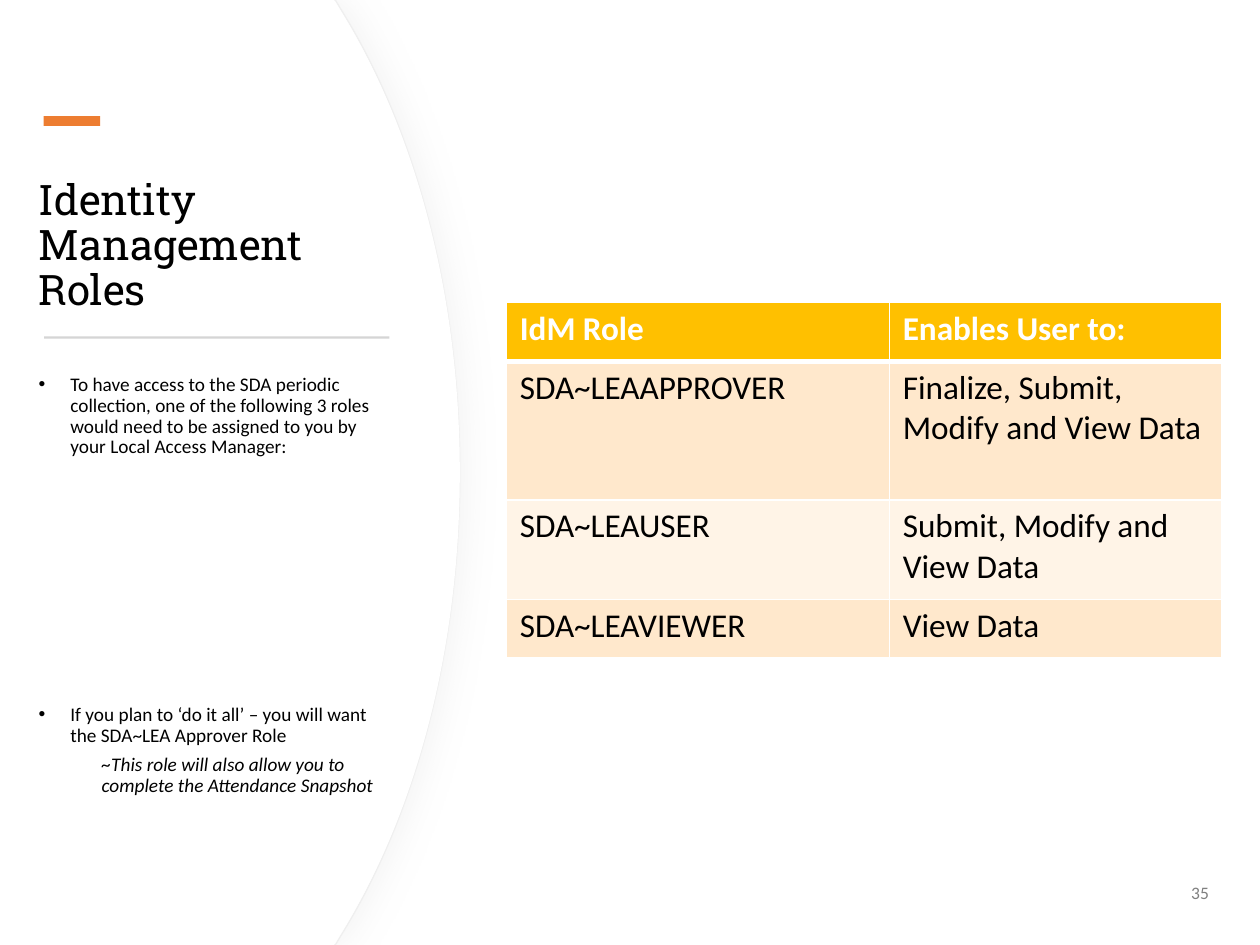
"""Build the Identity Management Roles slide with its role table."""
from lxml.etree import SubElement
from pptx import Presentation
from pptx.dml.color import RGBColor
from pptx.enum.shapes import MSO_SHAPE
from pptx.enum.text import MSO_ANCHOR, MSO_AUTO_SIZE, PP_ALIGN
from pptx.oxml import parse_xml
from pptx.oxml.ns import nsdecls, qn
from pptx.util import Cm, Pt

WHITE = RGBColor(0xFF, 0xFF, 0xFF)
BLACK = RGBColor(0x00, 0x00, 0x00)
GRAY = RGBColor(0x80, 0x80, 0x80)
RULE_GRAY = RGBColor(0xD5, 0xD5, 0xD5)
EDGE_GRAY = RGBColor(0xEF, 0xEF, 0xEF)
ORANGE = RGBColor(0xED, 0x7D, 0x31)
GOLD = RGBColor(0xFF, 0xC0, 0x00)
PEACH = RGBColor(0xFF, 0xE8, 0xCC)
CREAM = RGBColor(0xFF, 0xF4, 0xE7)
PAGE_HEIGHT = 19.05


def style_font(font, size, color, name="Calibri", **flags):
    for attribute, value in {"size": Pt(size), "name": name, **flags}.items():
        setattr(font, attribute, value)
    font.color.rgb = color


def prepare_frame(frame, anchor=MSO_ANCHOR.TOP, insets=(0, 0, 0, 0)):
    left, top, right, bottom = (Cm(inset) for inset in insets)
    settings = {
        "word_wrap": True, "auto_size": MSO_AUTO_SIZE.NONE, "vertical_anchor": anchor,
        "margin_left": left, "margin_top": top, "margin_right": right, "margin_bottom": bottom,
    }
    for attribute, value in settings.items():
        setattr(frame, attribute, value)


presentation = Presentation()
presentation.slide_width, presentation.slide_height = Cm(25.4), Cm(PAGE_HEIGHT)
slide = presentation.slides.add_slide(presentation.slide_layouts[5])
shapes = slide.shapes

upper_controls = ((8.36, 2.59), (9.27, 5.89))
lower_controls = tuple((x, PAGE_HEIGHT - y) for x, y in reversed(upper_controls))
for chord, outlined in ((6.76, True), (6.73, False)):
    outline = (
        (chord, 0), (chord + 0.12, 0.2), (9.27, PAGE_HEIGHT / 2),
        (chord + 0.12, PAGE_HEIGHT - 0.2), (chord, PAGE_HEIGHT), (0, PAGE_HEIGHT))
    builder = shapes.build_freeform(0, 0)
    builder.add_line_segments([(Cm(x), Cm(y)) for x, y in outline], close=True)
    panel = builder.convert_to_shape()
    segments = list(panel.element.iter(qn("a:lnTo")))
    for segment, controls in zip(segments[2:4], (upper_controls, lower_controls)):
        curve = parse_xml(f'<a:cubicBezTo {nsdecls("a")}/>')
        for x, y in controls:
            SubElement(curve, qn("a:pt"), x=str(Cm(x)), y=str(Cm(y)))
        curve.append(segment[0])
        segment.getparent().replace(segment, curve)
    panel.shadow.inherit = False
    panel.fill.solid()
    panel.fill.fore_color.rgb = WHITE
    if outlined:
        panel.line.color.rgb = EDGE_GRAY
        panel.line.width = Pt(0.75)
        panel.element.spPr.find(qn("a:effectLst")).append(parse_xml(
            f'<a:outerShdw {nsdecls("a")} blurRad="{Pt(20)}" dist="{Pt(3)}" dir="0" algn="l" '
            'rotWithShape="0"><a:srgbClr val="D9D9D9"><a:alpha val="30000"/></a:srgbClr></a:outerShdw>'))
    else:
        panel.line.fill.background()

title = shapes.title
title.element.getparent().append(title.element)
title.left, title.top, title.width, title.height = Cm(0.78), Cm(3.23), Cm(7.16), Cm(3.12)
title.text = "Identity Management Roles"
prepare_frame(title.text_frame, MSO_ANCHOR.BOTTOM)
heading = title.text_frame.paragraphs[0]
heading.alignment = PP_ALIGN.LEFT
heading.line_spacing = 0.9
style_font(heading.font, 24, BLACK, "Roboto Slab")

for bounds, rotation, color in (
    ((1.35, 1.87, 0.2, 1.14), 90, ORANGE),
    ((0.89, 6.78, 6.96, 0.05), 0, RULE_GRAY),
):
    bar = shapes.add_shape(MSO_SHAPE.RECTANGLE, *(Cm(length) for length in bounds))
    bar.rotation = rotation
    bar.shadow.inherit = False
    bar.fill.solid()
    bar.fill.fore_color.rgb = color
    bar.line.fill.background()

guidance = shapes.add_textbox(Cm(0.78), Cm(7.56), Cm(7.16), Cm(8.92)).text_frame
prepare_frame(guidance, insets=(0, 0, 0, 0.13))
notes = (
    ("To have access to the SDA periodic collection, one of the following 3 roles would "
     "need to be assigned to you by your Local Access Manager:", 0, 0),
    ("If you plan to ‘do it all’ – you will want the SDA~LEA Approver Role", 0, 141),
    ("~This role will also allow you to complete the Attendance Snapshot", 1, 5),
)
for index, (text, level, space_before) in enumerate(notes):
    note = guidance.add_paragraph() if index else guidance.paragraphs[0]
    note.text = text
    note.level = level
    note.line_spacing = 0.9
    note.space_before = Pt(space_before)
    properties = note._p.get_or_add_pPr()
    properties.set("marL", str(Cm(1.27 if level else 0.64)))
    properties.set("indent", str(Cm(0 if level else -0.64)))
    if level:
        SubElement(properties, qn("a:buNone"))
    else:
        SubElement(properties, qn("a:buFont"), typeface="Arial")
        SubElement(properties, qn("a:buChar"), char="•")
    style_font(note.font, 11, BLACK, italic=bool(level))

page_frame = shapes.add_textbox(Cm(20.2), Cm(17.65), Cm(4.42), Cm(1.02)).text_frame
prepare_frame(page_frame, insets=(0.25, 0.13, 0.25, 0.13))
page_number = page_frame.paragraphs[0]
page_number.text = "35"
page_number.alignment = PP_ALIGN.RIGHT
page_number.space_after = Pt(6)
style_font(page_number.font, 10, GRAY)

roles = (
    ("IdM Role", "Enables User to:"),
    ("SDA~LEAAPPROVER", "Finalize, Submit, Modify and View Data"),
    ("SDA~LEAUSER", "Submit, Modify and View Data"),
    ("SDA~LEAVIEWER", "View Data"),
)
column_widths = (7.72, 6.7)
row_heights = (1.19, 2.79, 2.01, 1.18)
role_table = shapes.add_table(
    len(roles), len(column_widths), Cm(10.21), Cm(6.1),
    Cm(sum(column_widths)), Cm(sum(row_heights))).table
for column, width in zip(role_table.columns, column_widths):
    column.width = Cm(width)
for row_index, (row, height, texts) in enumerate(zip(role_table.rows, row_heights, roles)):
    row.height = Cm(height)
    is_header = row_index == 0
    for cell, text in zip(row.cells, texts):
        cell.text = text
        cell.margin_left = cell.margin_right = Cm(0.27)
        cell.margin_top = cell.margin_bottom = Cm(0.13)
        cell_properties = cell._tc.get_or_add_tcPr()
        for side in "LRTB":
            thick = (is_header and side == "B") or (row_index == 1 and side == "T")
            border = SubElement(cell_properties, qn(f"a:ln{side}"), w=str(Pt(3 if thick else 1)))
            SubElement(SubElement(border, qn("a:solidFill")), qn("a:srgbClr"), val=str(WHITE))
        cell.fill.solid()
        cell.fill.fore_color.rgb = GOLD if is_header else (CREAM, PEACH)[row_index % 2]
        style_font(cell.text_frame.paragraphs[0].font, 19, WHITE if is_header else BLACK, bold=is_header)

presentation.save("out.pptx")
